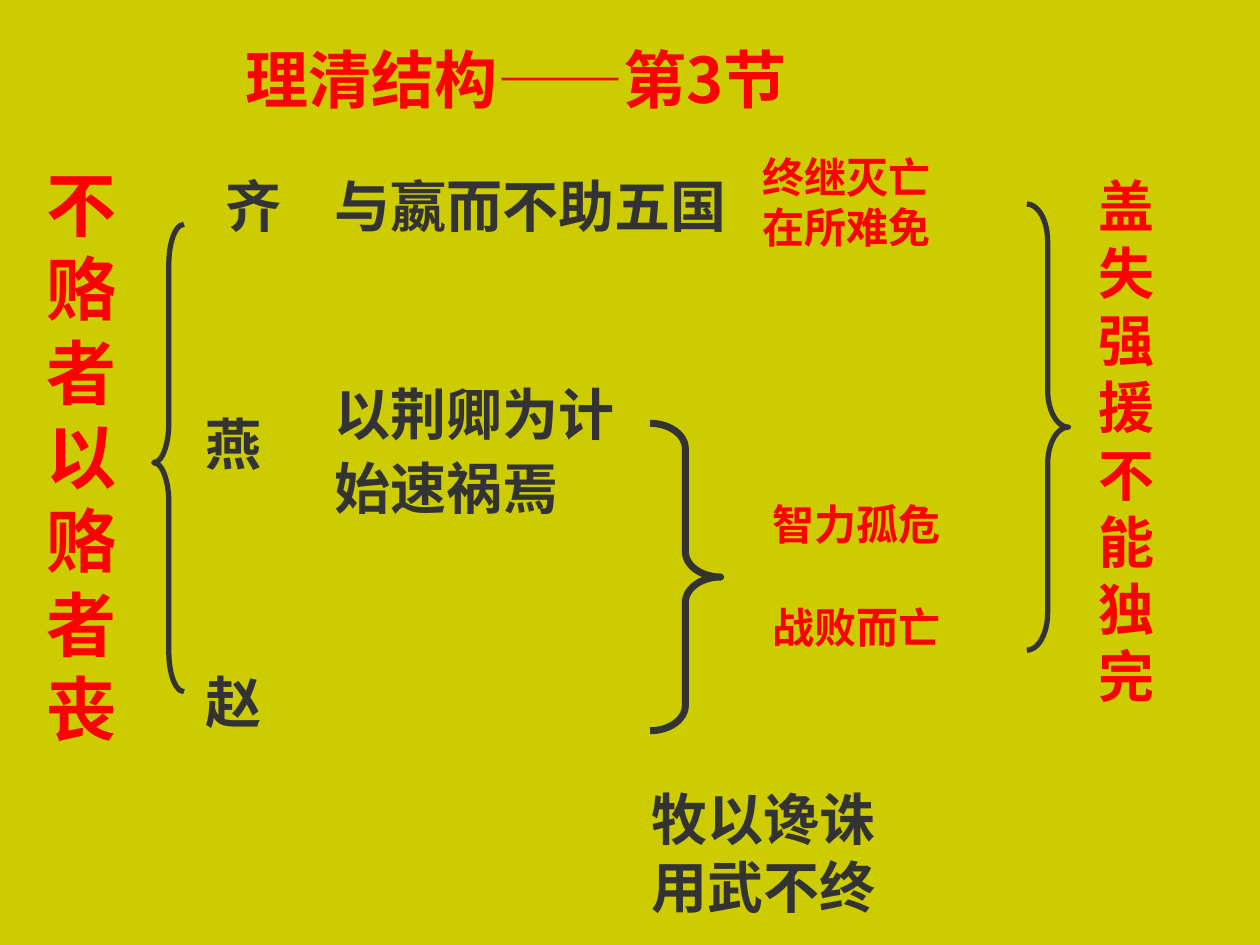
"""Build the outline slide for section 3 with braces and text columns."""
import pptx
import pptx.util
import pptx.dml.color
import pptx.enum.shapes
import pptx.enum.text
import pptx.oxml.ns
import lxml.etree

RED, DARK, BACK = "FF0000", "333333", "CCCC00"
TIMES, ARIAL, HAN = "Times New Roman", "Arial", "Noto Sans CJK SC"
WIDE, HIGH = 10, 7.5
PITCH = 1.2

TITLE = [("理清结构", HAN, True), ("——", ARIAL, False), ("第3节", HAN, True)]

# lines, place, size, font, colour, wrap, gap between paragraphs
TEXTS = [
    (["不赂者以赂者", "丧"], (0.27, 1.23, 0.87, 4.77), 40, TIMES, RED, True, 0),
    (["齐"], (1.69, 1.31, 0.65, 0.63), 32, TIMES, DARK, False, 0),
    (["燕"], (1.53, 3.2, 0.65, 0.63), 32, TIMES, DARK, False, 0),
    (["赵"], (1.53, 5.25, 0.65, 0.63), 32, TIMES, DARK, False, 0),
    (["与嬴而不助五国"], (2.56, 1.31, 3.4, 0.63), 32, TIMES, DARK, True, 0),
    (["以荆卿为计", "始速祸焉"], (2.56, 2.96, 2.6, 1.23), 32, TIMES, DARK, True, 4),
    (["牧以谗诛", "用武不终"], (5.07, 6.18, 2.43, 1.17), 32, TIMES, DARK, True, 0),
    (["盖失强援不能独完"], (8.62, 1.31, 0.99, 4.36), 32, TIMES, RED, True, 0),
    (["终继灭亡在所难免"], (5.95, 1.15, 1.81, 1.03), 24, ARIAL, RED, True, 0),
    (["智力孤危", "战败而亡"], (6.03, 3.91, 1.81, 1.47), 24, ARIAL, RED, True, 30),
]

BRACES = [
    ("LEFT_BRACE", (1.22, 1.78, 0.24, 3.71), (1.31, 0.51), 3),
    ("RIGHT_BRACE", (8.15, 1.62, 0.33, 3.54), (0.89, 0.5), 3),
    ("RIGHT_BRACE", (5.16, 3.36, 0.56, 2.44), (0.36, 0.5), 4),
]


def tint(code):
    return pptx.dml.color.RGBColor.from_string(code)


def inches(place):
    return [pptx.util.Inches(part) for part in place]


def style(font, size, name, code, bold=True):
    font.size = pptx.util.Pt(size)
    font.bold = bold
    font.name = name
    font.color.rgb = tint(code)
    east = lxml.etree.SubElement(font._element, pptx.oxml.ns.qn("a:ea"))
    east.set("typeface", HAN)


def add_title(slide):
    title = slide.shapes.title
    title.left, title.top, title.width, title.height = inches((1.85, 0.2, 5.4, 0.85))
    frame = title.text_frame
    frame.vertical_anchor = pptx.enum.text.MSO_ANCHOR.MIDDLE
    para = frame.paragraphs[0]
    para.alignment = pptx.enum.text.PP_ALIGN.LEFT
    for words, name, bold in TITLE:
        run = para.add_run()
        run.text = words
        style(run.font, 36, name, RED, bold)


def add_text(slide, lines, place, size, name, code, wrap, gap):
    frame = slide.shapes.add_textbox(*inches(place)).text_frame
    frame.word_wrap = wrap
    frame.text = "\n".join(lines)
    for rank, para in enumerate(frame.paragraphs):
        para.alignment = pptx.enum.text.PP_ALIGN.LEFT
        para.line_spacing = pptx.util.Pt(size * PITCH)
        if rank and gap:
            para.space_before = pptx.util.Pt(gap)
        style(para.font, size, name, code)


def add_brace(slide, kind, place, bends, width):
    kind = pptx.enum.shapes.MSO_SHAPE[kind]
    brace = slide.shapes.add_shape(kind, *inches(place))
    brace.shadow.inherit = False
    brace.fill.background()
    brace.line.color.rgb = tint(DARK)
    brace.line.width = pptx.util.Pt(width)
    line = brace._element.spPr.find(pptx.oxml.ns.qn("a:ln"))
    lxml.etree.SubElement(line, pptx.oxml.ns.qn("a:round"))
    for rank, bend in enumerate(bends):
        brace.adjustments[rank] = bend


def main():
    deck = pptx.Presentation()
    deck.slide_width, deck.slide_height = inches((WIDE, HIGH))
    slide = deck.slides.add_slide(deck.slide_layouts[5])
    slide.background.fill.solid()
    slide.background.fill.fore_color.rgb = tint(BACK)
    add_title(slide)
    for brace in BRACES:
        add_brace(slide, *brace)
    for text in TEXTS:
        add_text(slide, *text)
    deck.save("out.pptx")


if __name__ == "__main__":
    main()
